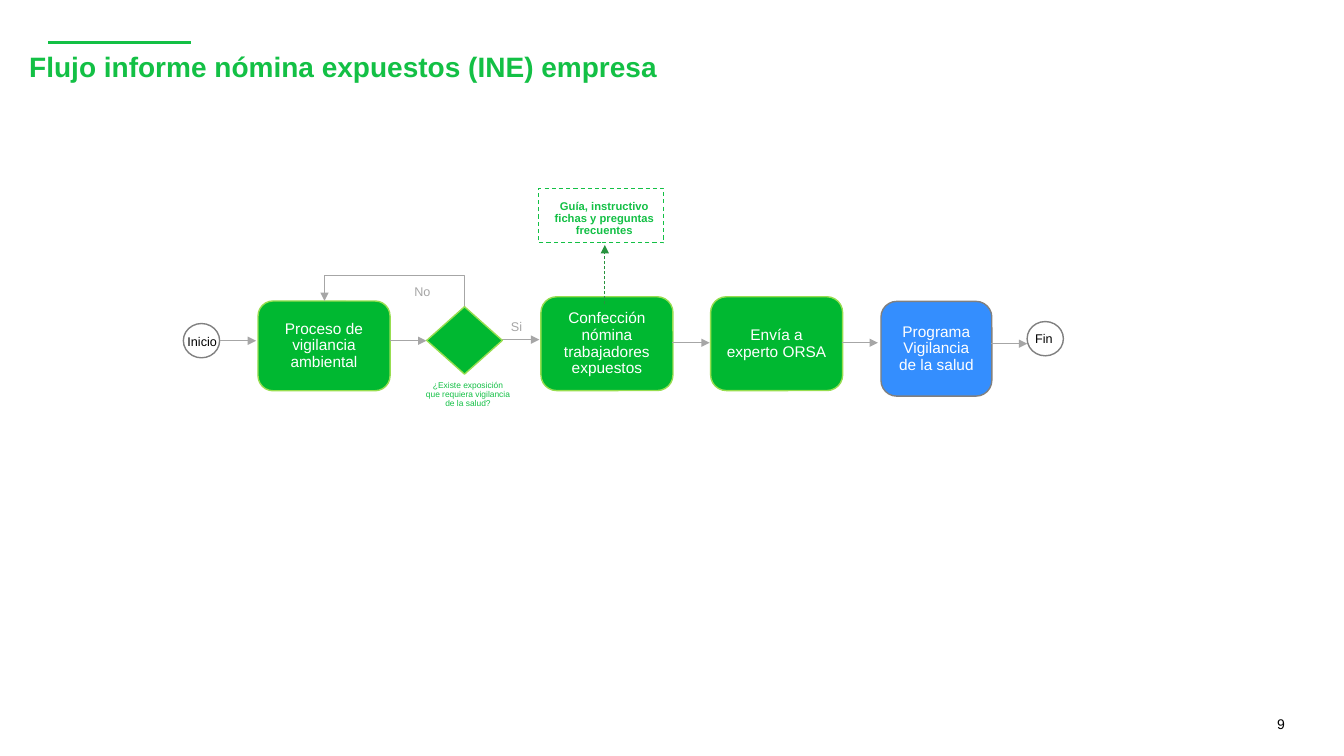
from lxml import etree
from pptx import Presentation
from pptx.dml.color import RGBColor
from pptx.enum import dml, shapes, text
from pptx.oxml import ns
from pptx.util import Pt

BRAND, GREEN, LIME, BLUE = "13C045", "00B831", "97DE50", "348EFE"
DARK_GREEN, GRAY, PALE_GRAY = "27933E", "808080", "A6A6A6"
WHITE, BLACK = "FFFFFF", "000000"
CENTER = text.PP_ALIGN.CENTER
SHAPE = shapes.MSO_SHAPE


def color(hex_code):
    return RGBColor.from_string(hex_code)


def style_line(line, hex_code, width, dashed=False):
    line.color.rgb = color(hex_code)
    line.width = Pt(width)
    if dashed:
        line.dash_style = dml.MSO_LINE.DASH


def add_arrowhead(item):
    line = item.line._get_or_add_ln()
    etree.SubElement(line, ns.qn("a:tailEnd"), type="triangle")


def write(frame, lines, size, hex_code, align=None, bold=False, spacing=0.9):
    for index, line in enumerate(lines):
        paragraph = frame.paragraphs[0] if index == 0 else frame.add_paragraph()
        paragraph.text = line
        paragraph.alignment = align
        paragraph.line_spacing = spacing
        font_format = {"name": "Arial", "size": Pt(size), "bold": bold}
        for key, value in font_format.items():
            setattr(paragraph.font, key, value)
        paragraph.font.color.rgb = color(hex_code)


def add_label(slide, x, y, width, height, lines, size, hex_code, wrap=False, **style):
    frame = slide.shapes.add_textbox(Pt(x), Pt(y), Pt(width), Pt(height)).text_frame
    for side in ("left", "top", "right", "bottom"):
        setattr(frame, f"margin_{side}", 0)
    frame.word_wrap = wrap
    write(frame, lines, size, hex_code, **style)


def add_node(slide, kind, x, y, width, height, fill, outline, caption=None,
             weight=1, dashed=False):
    node = slide.shapes.add_shape(kind, Pt(x), Pt(y), Pt(width), Pt(height))
    node.shadow.inherit = False
    node.fill.solid()
    node.fill.fore_color.rgb = color(fill)
    style_line(node.line, outline, weight, dashed)
    if caption:
        node.text_frame.word_wrap = True
        node.text_frame.vertical_anchor = text.MSO_ANCHOR.MIDDLE
        write(node.text_frame, [caption], 11, WHITE, align=CENTER)


def add_line(slide, start, end, hex_code, width, dashed=False, arrow=True):
    line = slide.shapes.add_connector(
        shapes.MSO_CONNECTOR.STRAIGHT, *(Pt(value) for value in (*start, *end)))
    style_line(line.line, hex_code, width, dashed)
    if arrow:
        add_arrowhead(line)
    etree.SubElement(line._element.spPr, ns.qn("a:effectLst"))


def add_header(slide, left, top):
    add_line(slide, (left + 13.6, top), (left + 115.8, top), BRAND, 2, arrow=False)
    add_label(slide, left, top + 8, 771, 48,
              ["Flujo informe nómina expuestos (INE) empresa"], 20, BRAND,
              wrap=True, bold=True)


def add_terminals(slide, left, top):
    """Start and end circles with their names."""
    for name, x, y, text_x, text_y in (("Inicio", 0, 96.5, 2.9, 105.2),
                                       ("Fin", 602.7, 95.1, 608.4, 103)):
        add_node(slide, SHAPE.OVAL, left + x, top + y, 25.9, 24.5, WHITE, GRAY)
        add_label(slide, left + text_x, top + text_y, 25.2, 23.8, [name], 9, BLACK)


def add_steps(slide, left, top):
    for caption, x, y, width, height, fill, outline in (
            ("Proceso de vigilancia ambiental", 53.3, 80.4, 94.3, 64.1, GREEN, LIME),
            ("Confección nómina trabajadores expuestos", 255.4, 77.4, 94.3, 67, GREEN, LIME),
            ("Envía a experto ORSA", 376.6, 77.4, 94.3, 67, GREEN, LIME),
            ("Programa Vigilancia de la salud", 498.3, 80.7, 79.2, 67.7, BLUE, GRAY)):
        add_node(slide, SHAPE.ROUNDED_RECTANGLE, left + x, top + y, width, height,
                 fill, outline, caption)
    for start, end, y in ((26, 51.9, 108.8), (147.6, 173.6, 108.8), (227.6, 254.2, 108),
                          (349.2, 375.9, 110.2), (470.2, 496.1, 110.2),
                          (576.8, 602.7, 110.9)):
        add_line(slide, (left + start, top + y), (left + end, top + y), PALE_GRAY, 0.5)


def add_decision(slide, left, top):
    """Exposure question, its two answers and the loop back to the process."""
    add_node(slide, SHAPE.DIAMOND, left + 173.8, top + 84.5, 54, 48.2, GREEN, LIME)
    add_label(slide, left + 163.3, top + 137.6, 80, 29.5,
              ["¿Existe exposición", "que requiera vigilancia", "de la salud?"],
              6, BRAND, align=CENTER)
    for answer, x, y in (("No", 164.9, 69.2), ("Si", 234, 94.4)):
        add_label(slide, left + x, top + y, 25.2, 23.8, [answer], 9, PALE_GRAY)
    corners = [(Pt(left + x), Pt(top + y)) for x, y in
               ((201, 84.3), (201, 62.3), (100.8, 62.3), (100.8, 80.4))]
    builder = slide.shapes.build_freeform(*corners[0])
    builder.add_line_segments(corners[1:], close=False)
    loop = builder.convert_to_shape()
    loop.shadow.inherit = False
    loop.fill.background()
    style_line(loop.line, PALE_GRAY, 0.5)
    add_arrowhead(loop)


def add_guide(slide, left, top):
    add_line(slide, (left + 301, top + 82.8), (left + 301, top + 40.4),
             DARK_GREEN, 0.5, dashed=True)
    add_node(slide, SHAPE.RECTANGLE, left + 253.8, top, 89.3, 38.9, WHITE, BRAND,
             weight=0.75, dashed=True)
    add_label(slide, left + 255.7, top + 8.7, 90, 29.5,
              ["Guía, instructivo", "fichas y preguntas", "frecuentes"],
              8, BRAND, align=CENTER, bold=True)


def main():
    deck = Presentation()
    deck.slide_width, deck.slide_height = Pt(960), Pt(540)
    slide = deck.slides.add_slide(deck.slide_layouts[6])
    add_header(slide, 20.9, 30.2)
    for add_part in (add_terminals, add_steps, add_decision, add_guide):
        add_part(slide, left=131, top=134.6)
    add_label(slide, 912.2, 511, 39.6, 18.7, ["9"], 10, BLACK, wrap=True, spacing=1.0)
    deck.save("out.pptx")


if __name__ == "__main__":
    main()
